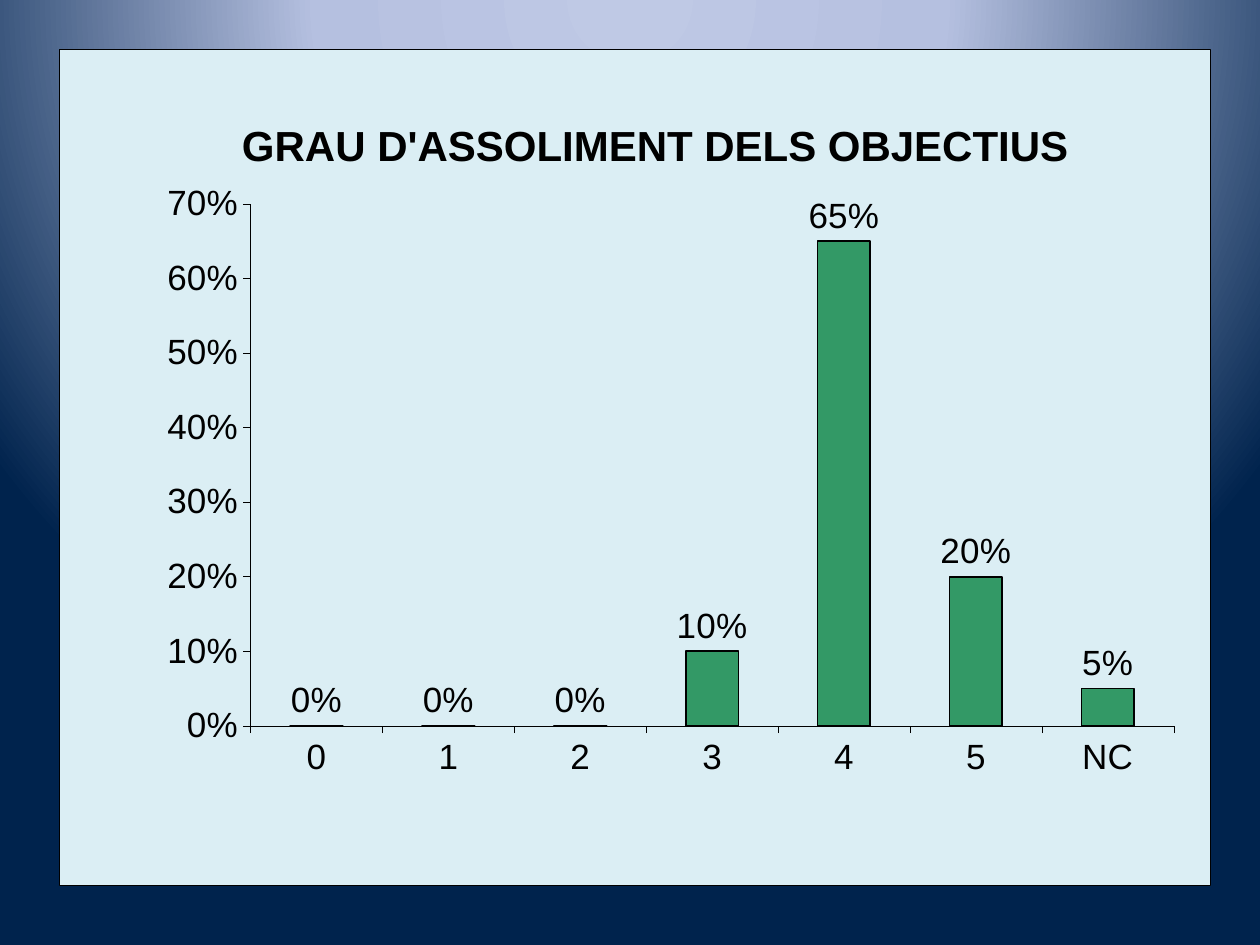
import pptx
import pptx.chart.data
import pptx.dml.color
import pptx.enum.chart
import pptx.oxml
import pptx.oxml.ns
import pptx.util

Inches, Pt = pptx.util.Inches, pptx.util.Pt
qn = pptx.oxml.ns.qn
NS = pptx.oxml.ns.nsdecls("a", "c")

COLORS = {
    "glow": "BFC9E5",
    "haze": "B5C0E0",
    "navy": "00234D",
    "panel": "DBEEF4",
    "bar": "339966",
    "ink": "000000",
}


def rgb(name):
    return pptx.dml.color.RGBColor.from_string(COLORS[name])


def set_layout(parent, index, target, **fractions):
    """Place a chart part by fractions of the chart area."""
    for old in parent.findall(qn("c:layout")):
        parent.remove(old)
    inner = f'<c:layoutTarget val="{target}"/>' if target else ""
    inner += '<c:xMode val="edge"/><c:yMode val="edge"/>'
    inner += "".join(f'<c:{k} val="{v}"/>' for k, v in fractions.items())
    parent.insert(index, pptx.oxml.parse_xml(
        f"<c:layout {NS}><c:manualLayout>{inner}</c:manualLayout></c:layout>"))


class SlideBuilder:
    def __init__(self, prs, font, size):
        self.font, self.size = font, size
        self.slide = prs.slides.add_slide(prs.slide_layouts[6])

    def style_font(self, font, size, bold=False):
        font.name, font.size, font.bold = self.font, Pt(size), bold
        font.color.rgb = rgb("ink")

    def style_line(self, line, width):
        line.color.rgb = rgb("ink")
        line.width = Pt(width)

    def radial_background(self, stops):
        fill = self.slide.background.fill
        fill.solid()
        bg_pr = self.slide.element.find(".//" + qn("p:bgPr"))
        gs = "".join(f'<a:gs pos="{pos * 1000}"><a:srgbClr val="{COLORS[name]}"/></a:gs>'
                     for pos, name in stops)
        bg_pr.replace(bg_pr[0], pptx.oxml.parse_xml(
            f'<a:gradFill {NS} rotWithShape="1"><a:gsLst>{gs}</a:gsLst>'
            '<a:path path="circle"><a:fillToRect l="50000" t="-80000" r="50000" b="180000"/>'
            "</a:path></a:gradFill>"))

    def column_chart(self, title, cats, vals, left, top, width, height):
        data = pptx.chart.data.CategoryChartData(number_format="0%")
        data.categories = cats
        data.add_series("Series 1", vals)
        chart = self.slide.shapes.add_chart(
            pptx.enum.chart.XL_CHART_TYPE.COLUMN_CLUSTERED,
            Inches(left), Inches(top), Inches(width), Inches(height), data).chart
        self.style_font(chart.font, self.size)
        chart.has_legend = False
        self.chart_title(chart, title)
        self.axes(chart)
        self.bars(chart.plots[0])
        self.chart_area(chart)
        set_layout(chart.element.find(".//" + qn("c:plotArea")), 0, "inner",
                   x=0.166, y=0.185, w=0.802, h=0.624)

    def chart_title(self, chart, text):
        chart.has_title = True
        r = chart.chart_title.text_frame.paragraphs[0].add_run()
        r.text = text
        self.style_font(r.font, 24, bold=True)
        set_layout(chart.element.find(".//" + qn("c:title")), 1, None, x=0.152, y=0.073)

    def axes(self, chart):
        for axis in (chart.category_axis, chart.value_axis):
            axis.has_major_gridlines = False
            axis.major_tick_mark = pptx.enum.chart.XL_TICK_MARK.OUTSIDE
            self.style_line(axis.format.line, 0.25)
            self.style_font(axis.tick_labels.font, self.size)
        axis = chart.value_axis
        axis.minimum_scale, axis.maximum_scale, axis.major_unit = 0, 0.7, 0.1
        axis.tick_labels.number_format = "0%"
        axis.tick_labels.number_format_is_linked = False

    def bars(self, plot):
        plot.gap_width = 150
        plot.vary_by_categories = False
        series = plot.series[0]
        series.format.fill.solid()
        series.format.fill.fore_color.rgb = rgb("bar")
        self.style_line(series.format.line, 1)
        labels = series.data_labels
        labels.show_value = True
        labels.number_format = "0%"
        labels.number_format_is_linked = False
        labels.position = pptx.enum.chart.XL_LABEL_POSITION.OUTSIDE_END
        self.style_font(labels.font, self.size)

    def chart_area(self, chart):
        chart.element.find(qn("c:chart")).addnext(pptx.oxml.parse_xml(
            f'<c:spPr {NS}><a:solidFill><a:srgbClr val="{COLORS["panel"]}"/></a:solidFill>'
            f'<a:ln w="{Pt(0.25)}"><a:solidFill><a:srgbClr val="{COLORS["ink"]}"/>'
            "</a:solidFill></a:ln></c:spPr>"))


def main():
    prs = pptx.Presentation()
    prs.slide_width, prs.slide_height = Inches(10), Inches(7.5)
    s = SlideBuilder(prs, "Arial", 20)
    s.radial_background([(0, "glow"), (40, "haze"), (100, "navy")])
    s.column_chart("GRAU D'ASSOLIMENT DELS OBJECTIUS",
                   ["0", "1", "2", "3", "4", "5", "NC"],
                   [0, 0, 0, 0.1, 0.65, 0.2, 0.05],
                   0.47, 0.39, 9.14, 6.64)
    prs.save("out.pptx")


if __name__ == "__main__":
    main()
